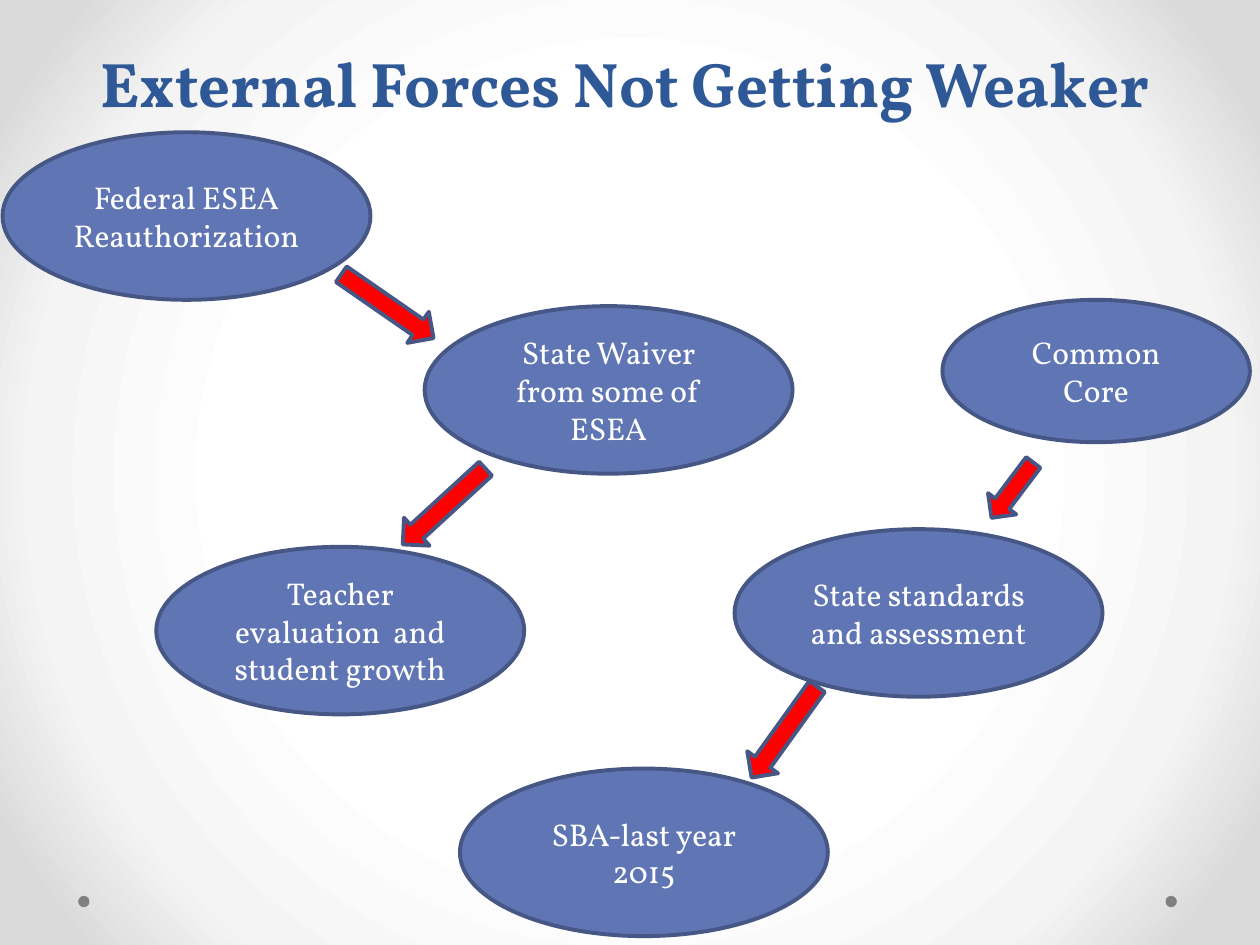
from dataclasses import dataclass

from pptx import Presentation
from pptx.dml.color import RGBColor
from pptx.enum.shapes import MSO_SHAPE
from pptx.enum.text import MSO_ANCHOR, PP_ALIGN
from pptx.oxml import parse_xml
from pptx.oxml.ns import nsdecls, qn
from pptx.util import Inches, Pt

OVAL, ARROW = MSO_SHAPE.OVAL, MSO_SHAPE.RIGHT_ARROW
MIDDLE, BOTTOM = MSO_ANCHOR.MIDDLE, MSO_ANCHOR.BOTTOM
CENTER = PP_ALIGN.CENTER


@dataclass(frozen=True)
class Theme:
    font: str = "Vollkorn"
    title: str = "2F5897"
    force: str = "6076B4"
    outline: str = "475785"
    arrow: str = "FF0000"
    dot: str = "808080"
    label: str = "FFFFFF"
    glow: tuple = ((50, "FFFFFF"), (76, "F4F4F4"), (92, "DADADA"))
    title_size: int = 36
    title_leading: int = 58
    label_size: int = 18
    line_width: float = 2.25


THEME = Theme()
FORCE_SIZE = (2.92, 1.33)
ARROW_SIZE = (0.89, 0.3)

FORCES = [
    ((0.02, 1.05, *FORCE_SIZE), ["Federal ESEA Reauthorization"]),
    ((3.37, 2.43, *FORCE_SIZE), ["State Waiver", "from some of ESEA"]),
    ((1.24, 4.34, *FORCE_SIZE), ["Teacher evaluation  and student growth"]),
    ((5.83, 4.2, *FORCE_SIZE), ["State standards and assessment"]),
    ((3.65, 6.1, *FORCE_SIZE), ["SBA-last year 2015"]),
    ((7.48, 2.38, 2.44, 1.13), ["Common Core"]),
]
ARROWS = [
    ((2.63, 2.28, *ARROW_SIZE), 34.7),
    ((3.08, 3.87, *ARROW_SIZE), 137.5),
    ((5.78, 5.66, *ARROW_SIZE), 125.7),
    ((7.76, 3.75, 0.55, 0.28), 127),
]
DOTS = [(left, 7.11, 0.09, 0.09) for left in (0.62, 9.25)]


def paint_background(page):
    """Circular glow, light in the centre and grey at the corners."""
    page.background.fill.solid()
    stops = "".join(
        f'<a:gs pos="{place * 1000}"><a:srgbClr val="{color}"/></a:gs>'
        for place, color in THEME.glow
    )
    glow = parse_xml(
        f'<a:gradFill {nsdecls("a")} rotWithShape="1"><a:gsLst>{stops}</a:gsLst>'
        '<a:path path="circle"><a:fillToRect l="50000" t="50000" r="50000" b="50000"/>'
        "</a:path></a:gradFill>"
    )
    properties = page.element.find(".//" + qn("p:bgPr"))
    properties.replace(properties[0], glow)


def write_text(frame, lines, anchor, leading=None, **font):
    frame.word_wrap = True
    frame.vertical_anchor = anchor
    for index, line in enumerate(lines):
        para = frame.paragraphs[0] if index == 0 else frame.add_paragraph()
        para.alignment = CENTER
        para.line_spacing = leading
        span = para.add_run()
        span.text = line
        span.font.color.rgb = RGBColor.from_string(font["color"])
        values = {"name": THEME.font, "size": Pt(font["size"]), "bold": font["bold"]}
        for name, value in values.items():
            setattr(span.font, name, value)


def add_title(page, box, text):
    title = page.shapes.add_textbox(*map(Inches, box))
    write_text(title.text_frame, [text], BOTTOM, Pt(THEME.title_leading),
               color=THEME.title, size=THEME.title_size, bold=True)


def add_figure(page, kind, box, fill, outlined=True):
    figure = page.shapes.add_shape(kind, *map(Inches, box))
    figure.shadow.inherit = False
    figure.fill.solid()
    figure.fill.fore_color.rgb = RGBColor.from_string(fill)
    if outlined:
        figure.line.color.rgb = RGBColor.from_string(THEME.outline)
        figure.line.width = Pt(THEME.line_width)
    else:
        figure.line.fill.background()
    return figure


def add_force(page, box, lines):
    force = add_figure(page, OVAL, box, THEME.force)
    write_text(force.text_frame, lines, MIDDLE,
               color=THEME.label, size=THEME.label_size, bold=False)


def add_arrow(page, box, angle):
    add_figure(page, ARROW, box, THEME.arrow).rotation = angle


def main():
    deck = Presentation()
    deck.slide_width, deck.slide_height = Inches(10), Inches(7.5)
    page = deck.slides.add_slide(deck.slide_layouts[6])

    # Backdrop
    paint_background(page)
    for box in DOTS:
        add_figure(page, OVAL, box, THEME.dot, outlined=False)

    # Title
    add_title(page, (0.46, 0.17, 9, 0.83), "External Forces Not Getting Weaker")

    # Forces and the arrows that lead from one to the next
    for box, lines in FORCES:
        add_force(page, box, lines)
    for box, angle in ARROWS:
        add_arrow(page, box, angle)

    deck.save("out.pptx")


if __name__ == "__main__":
    main()
